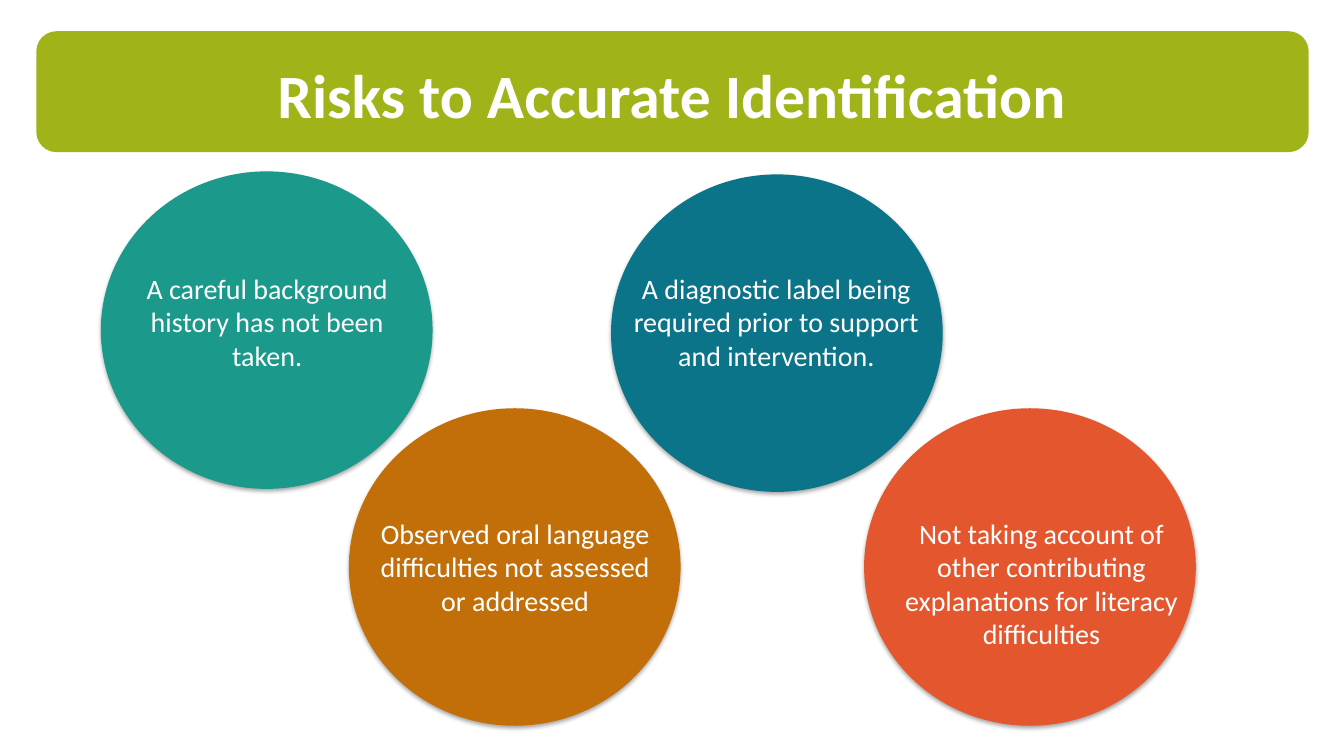
"""Build the slide on risks to accurate identification."""
from dataclasses import dataclass

from lxml import etree
from pptx import Presentation
from pptx.dml.color import RGBColor
from pptx.enum.shapes import MSO_SHAPE
from pptx.enum.text import MSO_ANCHOR, MSO_AUTO_SIZE, PP_ALIGN
from pptx.oxml.ns import qn
from pptx.shapes.autoshape import Shape
from pptx.slide import Slide
from pptx.util import Inches, Pt

ROUNDED = MSO_SHAPE.ROUNDED_RECTANGLE
ELLIPSE = MSO_SHAPE.OVAL
CENTER = PP_ALIGN.CENTER
MIDDLE = MSO_ANCHOR.MIDDLE
TOP = MSO_ANCHOR.TOP
FIT_SHAPE = MSO_AUTO_SIZE.SHAPE_TO_FIT_TEXT
NO_FIT = MSO_AUTO_SIZE.NONE

FONT = "Calibri"
COLORS = {
    "banner": "A0B419",
    "teal": "1B998B",
    "ochre": "C36F09",
    "blue": "0C7489",
    "red": "E4572E",
    "text": "FFFFFF",
    "shadow": "000000",
}
CIRCLE_WIDTH, CIRCLE_HEIGHT = 3.29, 3.15
UPPER_TEXT, LOWER_TEXT = 2.64, 5.07


@dataclass(frozen=True)
class Area:
    """A rectangle on the slide, in inches."""

    left: float
    top: float
    width: float
    height: float

    def lengths(self) -> tuple[Inches, ...]:
        """Return the four measures as lengths."""
        return tuple(Inches(n) for n in (self.left, self.top, self.width, self.height))


@dataclass(frozen=True)
class Risk:
    """A coloured circle and the statement placed over it."""

    color: str
    left: float
    top: float
    statement: str
    text_area: Area


RISKS = (
    Risk("teal", 1, 1.7, "A careful background history has not been taken.",
         Area(1.16, UPPER_TEXT, 2.98, 1.11)),
    Risk("ochre", 3.46, 4.05, "Observed oral language difficulties not assessed or addressed",
         Area(3.58, LOWER_TEXT, 3.06, 1.11)),
    Risk("blue", 6.06, 1.73, "A diagnostic label being required prior to support and intervention.",
         Area(6.17, UPPER_TEXT, 3.06, 1.11)),
    Risk("red", 8.57, 4.05,
         "Not taking account of other contributing explanations for literacy difficulties",
         Area(8.8, LOWER_TEXT, 3.06, 1.45)),
)


def add_filled_shape(page: Slide, kind: MSO_SHAPE, area: Area, color: str) -> Shape:
    """Draw a preset shape with a plain fill and no outline or shadow."""
    shape = page.shapes.add_shape(kind, *area.lengths())
    shape.fill.solid()
    shape.fill.fore_color.rgb = RGBColor.from_string(COLORS[color])
    shape.line.fill.background()
    shape.shadow.inherit = False
    return shape


def add_drop_shadow(shape: Shape) -> None:
    """Give a shape a soft shadow falling straight down."""
    effects = shape._element.spPr.find(qn("a:effectLst"))
    shadow = etree.SubElement(effects, qn("a:outerShdw"), blurRad="40000",
                              dist="23000", dir="5400000", rotWithShape="0")
    color = etree.SubElement(shadow, qn("a:srgbClr"), val=COLORS["shadow"])
    etree.SubElement(color, qn("a:alpha"), val="35000")


def add_text(page: Slide, area: Area, text: str, size: int, bold: bool = False,
             anchor: MSO_ANCHOR = TOP, fit: MSO_AUTO_SIZE = FIT_SHAPE) -> None:
    """Place a centred, wrapped paragraph of white text."""
    box = page.shapes.add_textbox(*area.lengths())
    frame = box.text_frame
    frame.word_wrap = True
    frame.auto_size = fit
    frame.vertical_anchor = anchor
    frame.text = text
    para = frame.paragraphs[0]
    para.alignment = CENTER
    font = para.runs[0].font
    font.name = FONT
    font.size = Pt(size)
    font.bold = bold
    font.color.rgb = RGBColor.from_string(COLORS["text"])


def main() -> None:
    """Assemble and save the deck."""
    deck = Presentation()
    deck.slide_width, deck.slide_height = Inches(13.33), Inches(7.5)
    page = deck.slides.add_slide(deck.slide_layouts[6])
    add_filled_shape(page, ROUNDED, Area(0.36, 0.31, 12.62, 1.2), "banner")
    add_text(page, Area(1.11, 0.35, 11.11, 1.16), "Risks to Accurate Identification",
             44, bold=True, anchor=MIDDLE, fit=NO_FIT)
    for risk in RISKS:
        area = Area(risk.left, risk.top, CIRCLE_WIDTH, CIRCLE_HEIGHT)
        add_drop_shadow(add_filled_shape(page, ELLIPSE, area, risk.color))
    for risk in RISKS:
        add_text(page, risk.text_area, risk.statement, 20)
    deck.save("out.pptx")


if __name__ == "__main__":
    main()
